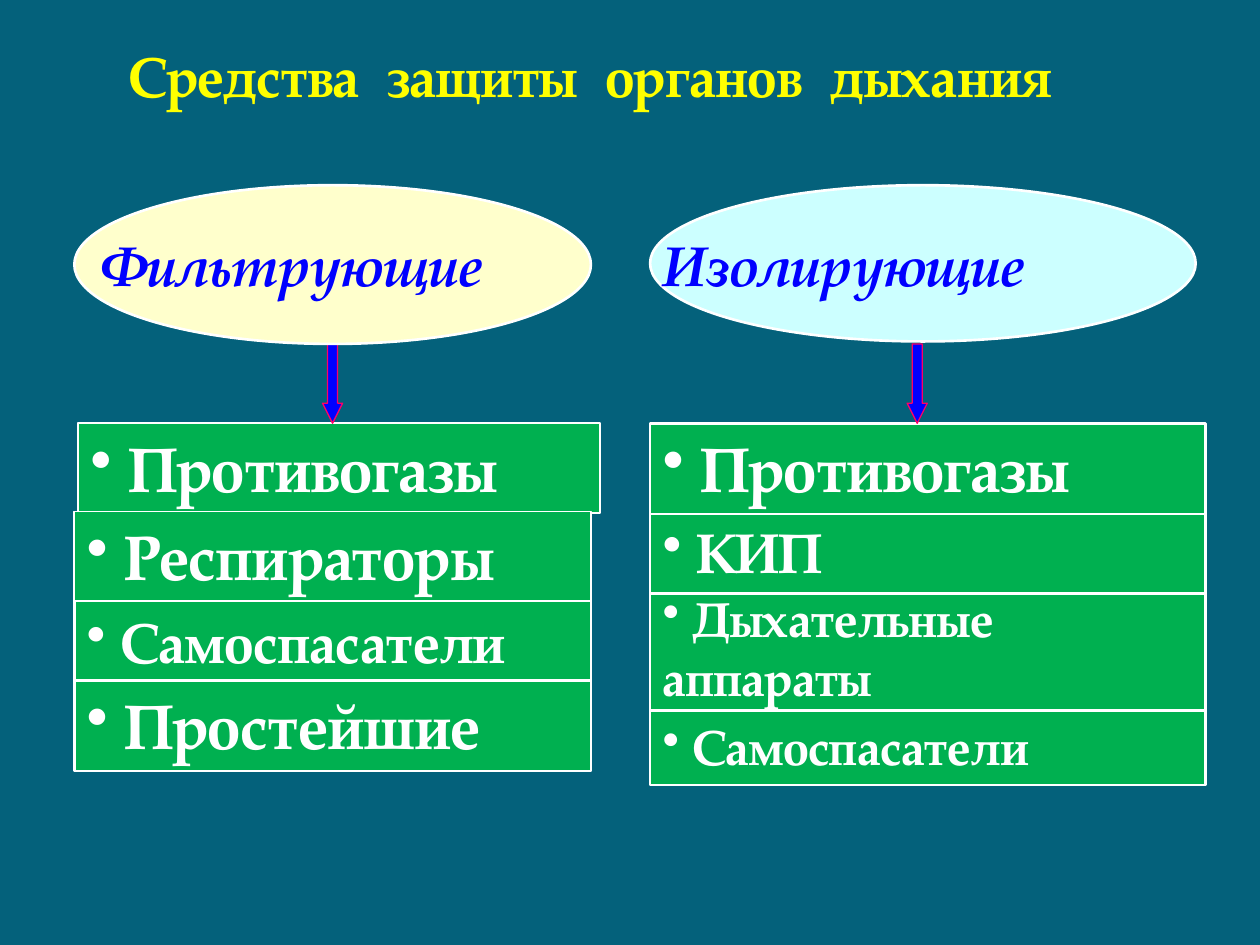
from pptx import Presentation
from pptx.dml.color import RGBColor
from pptx.enum.shapes import MSO_SHAPE as Shape
from pptx.enum.text import MSO_ANCHOR as Anchor, MSO_AUTO_SIZE as Fit, PP_ALIGN as Align
from pptx.oxml.ns import qn
from pptx.util import Inches, Pt
from lxml import etree

FONT = "TeX Gyre Pagella"
TEAL = RGBColor(0x04, 0x61, 0x7B)
GREEN = RGBColor(0x00, 0xB0, 0x50)
WHITE = RGBColor(0xFF, 0xFF, 0xFF)
YELLOW = RGBColor(0xFF, 0xFF, 0x00)
BLUE = RGBColor(0x00, 0x00, 0xFF)
PINK = RGBColor(0xFF, 0x00, 0x66)
CREAM = RGBColor(0xFF, 0xFF, 0xCC)
ICE = RGBColor(0xCC, 0xFF, 0xFF)


def write(frame, text, size, color, italic=False, bullet=False):
    """Put one left-aligned bold line of text at the top of a frame."""
    frame.word_wrap = True
    frame.vertical_anchor = Anchor.TOP
    para = frame.paragraphs[0]
    para.alignment = Align.LEFT
    if bullet:
        props = para._p.get_or_add_pPr()
        etree.SubElement(props, qn("a:buChar")).set("char", "•")
        para.font.size = Pt(size)
    run = para.add_run()
    run.text = text
    font = run.font
    font.name, font.size, font.bold, font.italic = FONT, Pt(size), True, italic
    font.color.rgb = color


def draw(slide, kind, box, fill, line, width):
    shape = slide.shapes.add_shape(kind, *map(Inches, box))
    shape.shadow.inherit = False
    shape.fill.solid()
    shape.fill.fore_color.rgb = fill
    shape.line.color.rgb = line
    shape.line.width = Pt(width)
    return shape


def add_title(slide, box, text):
    title = slide.shapes.title
    title.left, title.top, title.width, title.height = map(Inches, box)
    frame = title.text_frame
    frame.auto_size = Fit.NONE
    frame.margin_left = Inches(0.79)
    write(frame, text, 32, YELLOW)


def add_head(slide, box, text, fill, pad):
    """Oval with its caption."""
    draw(slide, Shape.OVAL, box, fill, WHITE, 1.5)
    left, top, width, _ = box
    label = slide.shapes.add_textbox(*map(Inches, (left, top + 0.31, width, 0.63)))
    label.text_frame.margin_left = Inches(pad)
    write(label.text_frame, text, 32, BLUE, italic=True)


def add_arrow(slide, box):
    arrow = draw(slide, Shape.DOWN_ARROW, box, BLUE, PINK, 0.75)
    arrow.adjustments[0] = 0.5
    arrow.adjustments[1] = 1.0


def add_row(slide, box, text, size, line):
    row = draw(slide, Shape.RECTANGLE, box, GREEN, WHITE, line)
    write(row.text_frame, " " + text, size, WHITE, bullet=True)
    row.text_frame.auto_size = Fit.SHAPE_TO_FIT_TEXT


def add_group(slide, head, arrow, rows):
    """One column: rows from back to front, then arrow and oval."""
    for row in rows:
        add_row(slide, *row)
    add_arrow(slide, (arrow, 2.73, 0.16, 0.63))
    add_head(slide, *head)


def main():
    deck = Presentation()
    deck.slide_width, deck.slide_height = Inches(10), Inches(7.5)
    slide = deck.slides.add_slide(deck.slide_layouts[5])
    slide.background.fill.solid()
    slide.background.fill.fore_color.rgb = TEAL

    add_title(slide, (0.23, 0.28, 9.38, 0.64), "Средства  защиты  органов  дыхания")

    # Filtering devices
    left, width = 0.59, 4.1
    add_group(slide, ((left, 1.47, width, 1.26), "Фильтрующие", CREAM, 0.21), 2.56, [
        ((0.62, 3.36, 4.14, 0.71), "Противогазы", 36, 1),
        ((left, 4.06, width, 0.72), "Респираторы", 36, 1),
        ((left, 4.77, width, 0.65), "Самоспасатели", 32, 1.5),
        ((left, 5.4, width, 0.72), "Простейшие", 36, 1.5),
    ])

    # Isolating devices
    left, width = 5.16, 4.41
    add_group(slide, ((left, 1.47, 4.33, 1.24), "Изолирующие", ICE, 0.1), 7.2, [
        ((left, 4.62, width, 1.06), "Дыхательные аппараты", 28, 1.5),
        ((left, 4.06, width, 0.65), "КИП", 32, 1.5),
        ((left, 3.36, width, 0.72), "Противогазы", 36, 1.5),
        ((left, 5.64, width, 0.59), "Самоспасатели", 28, 1.5),
    ])

    deck.save("out.pptx")


if __name__ == "__main__":
    main()
